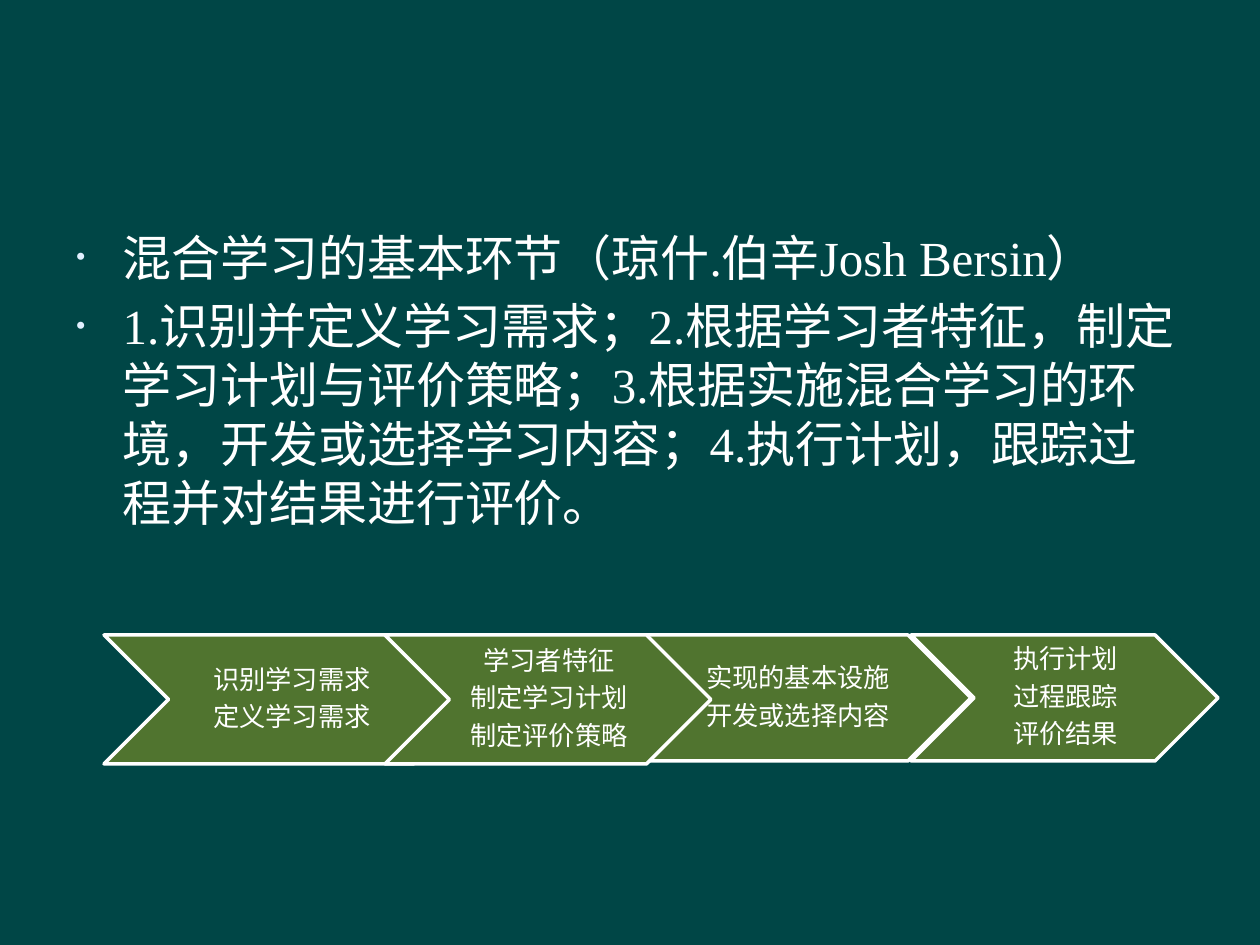
from lxml import etree
from pptx import Presentation
from pptx import util as u
from pptx.dml.color import RGBColor
from pptx.enum import shapes, text
from pptx.oxml import ns

PX = 914400 / 126
FONT = "Times New Roman"
WHITE = "FFFFFF"
BODY = [
    "混合学习的基本环节（琼什.伯辛Josh Bersin）",
    "1.识别并定义学习需求；2.根据学习者特征，制定学习计划与评价策略；"
    "3.根据实施混合学习的环境，开发或选择学习内容；4.执行计划，跟踪过程并对结果进行评价。",
]
STEPS = [
    (0, 374, 129, ["识别学习需求", "定义学习需求"]),
    (519, 348, 126, ["实现的基本设施", "开发或选择内容"]),
    (281, 326, 129, ["学习者特征", "制定学习计划", "制定评价策略"]),
    (807, 307, 126, ["执行计划", "过程跟踪", "评价结果"]),
]


def px(n):
    """Turn px into EMU."""
    return u.Emu(round(n * PX))


def color(value):
    """Turn a hex string into a colour."""
    return RGBColor.from_string(value)


def add_run(p, words, size):
    """Add one white run to a paragraph."""
    r = p.add_run()
    r.text = words
    r.font.size = u.Pt(size)
    r.font.name = FONT
    r.font.color.rgb = color(WHITE)


def add_bullet(p, char, hex_color, percent, indent):
    """Give a paragraph a coloured bullet with a hanging indent."""
    pPr = p._p.get_or_add_pPr()
    pPr.set("marL", str(px(indent)))
    pPr.set("indent", str(-px(indent)))
    clr = etree.SubElement(pPr, ns.qn("a:buClr"))
    etree.SubElement(clr, ns.qn("a:srgbClr"), val=hex_color)
    etree.SubElement(pPr, ns.qn("a:buSzPct"), val=str(percent * 1000))
    etree.SubElement(pPr, ns.qn("a:buFont"), typeface=FONT)
    etree.SubElement(pPr, ns.qn("a:buChar"), char=char)


def fill_body(sp, left, top, width, height):
    """Place the body placeholder and write its bulleted list."""
    sp.left, sp.top, sp.width, sp.height = map(px, (left, top, width, height))
    tf = sp.text_frame
    tf.auto_size = text.MSO_AUTO_SIZE.NONE
    for i, words in enumerate(BODY):
        p = tf.add_paragraph() if i else tf.paragraphs[0]
        add_bullet(p, "•", "E1F0FF", 60, 47)
        p.space_before = u.Pt(5.6 if i else 0)
        add_run(p, words, 28)


def add_step(s, left, top, width, height, lines):
    """Draw one chevron with its centred lines."""
    sp = s.shapes.add_shape(shapes.MSO_SHAPE.CHEVRON, *map(px, (left, top, width, height)))
    sp.shadow.inherit = False
    sp.fill.solid()
    sp.fill.fore_color.rgb = color("50742F")
    sp.line.color.rgb = color(WHITE)
    sp.line.width = u.Pt(2)
    tf = sp.text_frame
    tf.word_wrap = True
    tf.vertical_anchor = text.MSO_ANCHOR.MIDDLE
    tf.margin_left, tf.margin_top, tf.margin_right, tf.margin_bottom = map(px, (2, 1, 0, 1))
    for i, words in enumerate(lines):
        p = tf.add_paragraph() if i else tf.paragraphs[0]
        p.alignment = text.PP_ALIGN.CENTER
        p.line_spacing = 0.9
        p.space_after = u.Pt(5.25)
        add_run(p, words, 15)


def add_process(s, left, top):
    """Draw the chain of chevrons from its top left corner."""
    for dx, width, height, lines in STEPS:
        add_step(s, left + dx, top, width, height, lines)


def main():
    """Build and save the slide."""
    prs = Presentation()
    prs.slide_width, prs.slide_height = px(1260), px(945)
    s = prs.slides.add_slide(prs.slide_layouts[1])
    s.background.fill.solid()
    s.background.fill.fore_color.rgb = color("004646")
    title = s.shapes.title._element
    title.getparent().remove(title)
    fill_body(s.placeholders[1], 63, 221, 1134, 624)
    add_process(s, 104, 635)
    prs.save("out.pptx")


if __name__ == "__main__":
    main()
